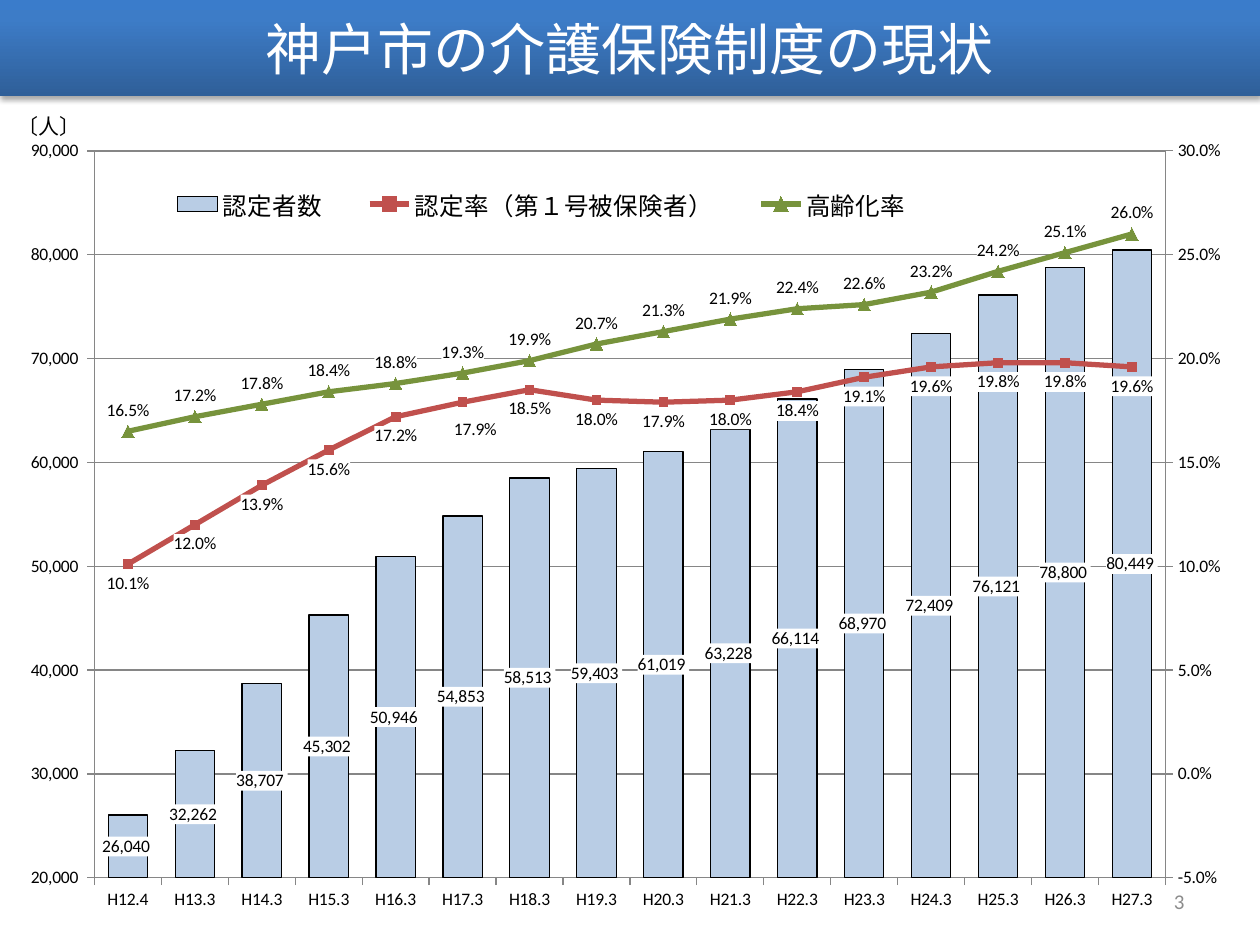
"""Build a slide charting certified users, certification rate and ageing rate."""
import copy
from dataclasses import dataclass
from typing import Any, NamedTuple

import pptx
import pptx.chart.axis
import pptx.chart.data
import pptx.dml.color
import pptx.enum.chart
import pptx.enum.shapes
import pptx.enum.text
import pptx.oxml
import pptx.oxml.ns
import pptx.util


@dataclass(frozen=True)
class Theme:
    latin: str = "Calibri"
    asian: str = "Noto Sans CJK JP"
    ink: str = "000000"
    paper: str = "FFFFFF"
    muted: str = "8C8C8C"
    grid: str = "868686"
    bar: str = "B9CDE5"
    certified: str = "C0504D"
    ageing: str = "77933C"
    banner: tuple = ((0, "2F5F99"), (0.8, "3D7CC7"), (1, "3A7CCB"))
    title_size: int = 32
    legend_size: int = 14
    note_size: int = 12
    chart_size: int = 10


class Box(NamedTuple):
    """Left, top, width and height as shares of the enclosing area."""
    x: float
    y: float
    w: float
    h: float


class Rate(NamedTuple):
    name: str
    percents: tuple
    color: str
    marker: Any
    marker_size: int
    label_side: Any


THEME = Theme()
WIDTH, HEIGHT = pptx.util.Inches(10), pptx.util.Inches(7.5)
BANNER_SHARE = 0.76 / 7.5
PLOT = Box(0.075, 0.065, 0.85, 0.856)
LEGEND = Box(0.11, 0.1, 0.64, 0.055)
YEARS = [f"H{year}.3" if year > 12 else "H12.4" for year in range(12, 28)]
CERTIFIED_COUNTS = (26040, 32262, 38707, 45302, 50946, 54853, 58513, 59403,
                    61019, 63228, 66114, 68970, 72409, 76121, 78800, 80449)
COUNT_FORMAT, RATE_FORMAT = "#,##0_ ", "0.0%"
SIDE = pptx.enum.chart.XL_LABEL_POSITION
MARKER = pptx.enum.chart.XL_MARKER_STYLE
RATES = (
    Rate("認定率（第１号被保険者）",
         (10.1, 12.0, 13.9, 15.6, 17.2, 17.9, 18.5, 18.0,
          17.9, 18.0, 18.4, 19.1, 19.6, 19.8, 19.8, 19.6),
         THEME.certified, MARKER.SQUARE, 5, SIDE.BELOW),
    Rate("高齢化率",
         (16.5, 17.2, 17.8, 18.4, 18.8, 19.3, 19.9, 20.7,
          21.3, 21.9, 22.4, 22.6, 23.2, 24.2, 25.1, 26.0),
         THEME.ageing, MARKER.TRIANGLE, 7, SIDE.ABOVE),
)


def rgb(code: str) -> pptx.dml.color.RGBColor:
    return pptx.dml.color.RGBColor.from_string(code)


def node(xml: str) -> Any:
    """Turn a fragment with c: and a: prefixes into an element."""
    head, mark, tail = xml.partition(">")
    slash = "/" if head.endswith("/") else ""
    return pptx.oxml.parse_xml(
        f"{head.rstrip('/')} {pptx.oxml.ns.nsdecls('c', 'a')}{slash}{mark}{tail}")


def place(box: Box) -> tuple:
    return tuple(round(share * side) for share, side in zip(box, (WIDTH, HEIGHT) * 2))


def write(shape: Any, text: str, size: int, color: str, font: str, align: Any) -> None:
    frame = shape.text_frame
    frame.text = text
    frame.vertical_anchor = pptx.enum.text.MSO_ANCHOR.MIDDLE
    paragraph = frame.paragraphs[0]
    paragraph.alignment = align
    face = paragraph.runs[0].font
    face.name, face.size, face.color.rgb = font, pptx.util.Pt(size), rgb(color)
    for props in shape.element.xpath(".//a:rPr"):
        props.append(node(f'<a:ea typeface="{THEME.asian}"/>'))


def add_banner(slide: Any, title: str) -> None:
    banner = slide.shapes.add_shape(
        pptx.enum.shapes.MSO_SHAPE.RECTANGLE, *place(Box(0, 0, 1, BANNER_SHARE)))
    banner.line.fill.background()
    banner.shadow.inherit = False
    banner.fill.gradient()
    banner.fill.gradient_angle = 90
    stops = banner.element.xpath(".//a:gsLst")[0]
    stops.append(copy.deepcopy(stops[-1]))
    for stop, (position, color) in zip(banner.fill.gradient_stops, THEME.banner):
        stop.position, stop.color.rgb = position, rgb(color)
    banner.element.xpath(".//a:effectLst")[0].append(node(
        '<a:outerShdw blurRad="40000" dist="23000" dir="5400000" rotWithShape="0">'
        f'<a:srgbClr val="{THEME.ink}"><a:alpha val="35000"/></a:srgbClr></a:outerShdw>'))
    write(banner, title, THEME.title_size, THEME.paper, THEME.latin,
          pptx.enum.text.PP_ALIGN.CENTER)


def add_note(slide: Any, box: Box, text: str, color: str, font: str, align: Any) -> None:
    note = slide.shapes.add_textbox(*place(box))
    note.text_frame.word_wrap = True
    write(note, text, THEME.note_size, color, font, align)


def manual_layout(box: Box, target: str = "") -> Any:
    modes = '<c:xMode val="edge"/><c:yMode val="edge"/>'
    shares = "".join(f'<c:{key} val="{share}"/>' for key, share in zip("xywh", box))
    return node(f"<c:layout><c:manualLayout>{target}{modes}{shares}"
                "</c:manualLayout></c:layout>")


def label(series: Any, side: Any, number_format: str) -> None:
    labels = series.data_labels
    labels.show_value, labels.position = True, side
    labels.number_format, labels.number_format_is_linked = number_format, False


def paint_label_backs(chart: Any) -> None:
    for number in chart.element.xpath(".//c:ser/c:dLbls/c:numFmt"):
        number.addnext(node(f'<c:spPr><a:solidFill><a:srgbClr val="{THEME.paper}"/>'
                            "</a:solidFill></c:spPr>"))


def nudge_label(labels: Any, index: int, dx: float, dy: float) -> None:
    """Shift one data label by shares of the chart, keeping the series style."""
    moved = node(f'<c:dLbl><c:idx val="{index}"/><c:layout><c:manualLayout>'
                 f'<c:x val="{dx}"/><c:y val="{dy}"/></c:manualLayout></c:layout></c:dLbl>')
    kept = ("numFmt", "spPr", "dLblPos", "showLegendKey", "showVal", "showCatName",
            "showSerName", "showPercent", "showBubbleSize")
    for tag in kept:
        moved.extend(copy.deepcopy(part) for part in labels.xpath(f"c:{tag}"))
    labels.insert(0, moved)


def scale(axis: Any, low: float, high: float, step: float, number_format: str) -> None:
    axis.minimum_scale, axis.maximum_scale, axis.major_unit = low, high, step
    axis.tick_labels.number_format = number_format
    axis.tick_labels.number_format_is_linked = False


def move_rates_to_right_axis(chart: Any) -> None:
    """Turn every series after the first into lines on a second value axis."""
    plot_area = chart.element.xpath(".//c:plotArea")[0]
    bars = plot_area.xpath("c:barChart")[0]
    lines = node('<c:lineChart><c:grouping val="standard"/><c:varyColors val="0"/>'
                 '<c:marker val="1"/><c:axId val="5001"/><c:axId val="5002"/></c:lineChart>')
    for series in bars.xpath("c:ser")[1:]:
        for flag in series.xpath("c:invertIfNegative"):
            series.remove(flag)
        lines.xpath("c:marker")[0].addprevious(series)
    bars.addnext(lines)
    categories, values = plot_area.xpath("c:catAx")[0], plot_area.xpath("c:valAx")[0]
    right_values, right_categories = copy.deepcopy(values), copy.deepcopy(categories)
    values.addnext(right_values)
    right_values.addnext(right_categories)
    for axis, own, other in ((right_categories, "5001", "5002"), (right_values, "5002", "5001")):
        axis.xpath("c:axId")[0].set("val", own)
        axis.xpath("c:crossAx")[0].set("val", other)
    right_values.xpath("c:axPos")[0].set("val", "r")
    right_values.xpath("c:crosses")[0].set("val", "max")
    rate_axis = pptx.chart.axis.ValueAxis(right_values)
    rate_axis.has_major_gridlines = False
    scale(rate_axis, -0.05, 0.3, 0.05, RATE_FORMAT)
    pptx.chart.axis.CategoryAxis(right_categories).visible = False


def style_rate(series: Any, rate: Rate) -> None:
    series.smooth = False
    series.format.line.color.rgb, series.format.line.width = rgb(rate.color), pptx.util.Pt(3)
    series.marker.style, series.marker.size = rate.marker, rate.marker_size
    series.marker.format.fill.solid()
    series.marker.format.fill.fore_color.rgb = rgb(rate.color)
    series.marker.format.line.color.rgb = rgb(rate.color)
    label(series, rate.label_side, RATE_FORMAT)


def add_trend_chart(slide: Any) -> None:
    figures = pptx.chart.data.CategoryChartData()
    figures.categories = YEARS
    figures.add_series("認定者数", CERTIFIED_COUNTS, COUNT_FORMAT)
    for rate in RATES:
        figures.add_series(rate.name, [round(p / 100, 3) for p in rate.percents], RATE_FORMAT)
    chart = slide.shapes.add_chart(
        pptx.enum.chart.XL_CHART_TYPE.COLUMN_CLUSTERED,
        *place(Box(0, BANNER_SHARE, 1, 1 - BANNER_SHARE)), figures).chart
    chart.has_title = False
    chart.font.name, chart.font.size = THEME.latin, pptx.util.Pt(THEME.chart_size)
    chart.font.color.rgb = rgb(THEME.ink)
    for axis in (chart.category_axis, chart.value_axis):
        axis.major_tick_mark = pptx.enum.chart.XL_TICK_MARK.OUTSIDE
        axis.format.line.color.rgb = rgb(THEME.grid)
    chart.value_axis.major_gridlines.format.line.color.rgb = rgb(THEME.grid)
    scale(chart.value_axis, 20000, 90000, 10000, COUNT_FORMAT)
    move_rates_to_right_axis(chart)

    bar_plot, rate_plot = chart.plots
    bar_plot.gap_width, bar_plot.vary_by_categories = 70, False
    counts = bar_plot.series[0]
    counts.format.fill.solid()
    counts.format.fill.fore_color.rgb = rgb(THEME.bar)
    counts.format.line.color.rgb, counts.format.line.width = rgb(THEME.ink), pptx.util.Pt(0.75)
    label(counts, SIDE.CENTER, COUNT_FORMAT)
    for series, rate in zip(rate_plot.series, RATES):
        style_rate(series, rate)
    paint_label_backs(chart)
    nudge_label(chart.element.xpath(".//c:lineChart/c:ser/c:dLbls")[0], 5, 0.01, 0.01)

    chart.has_legend = True
    chart.legend.position = pptx.enum.chart.XL_LEGEND_POSITION.TOP
    chart.legend.include_in_layout = False
    chart.legend.font.name, chart.legend.font.size = THEME.asian, pptx.util.Pt(THEME.legend_size)
    legend, plot_area = (chart.element.xpath(f".//c:{tag}")[0] for tag in ("legend", "plotArea"))
    for props in legend.xpath(".//a:defRPr"):
        props.append(node(f'<a:ea typeface="{THEME.asian}"/>'))
    for old in legend.xpath("c:layout") + plot_area.xpath("c:layout"):
        old.getparent().remove(old)
    legend.xpath("c:legendPos")[0].addnext(manual_layout(LEGEND))
    plot_area.insert(0, manual_layout(PLOT, '<c:layoutTarget val="inner"/>'))
    plot_area.append(node('<c:spPr><a:noFill/><a:ln w="9525"><a:solidFill>'
                          f'<a:srgbClr val="{THEME.grid}"/></a:solidFill></a:ln></c:spPr>'))


def main() -> None:
    deck = pptx.Presentation()
    deck.slide_width, deck.slide_height = WIDTH, HEIGHT
    slide = deck.slides.add_slide(deck.slide_layouts[6])
    align = pptx.enum.text.PP_ALIGN
    add_note(slide, Box(0.717, 0.927, 0.233, 0.053), "3", THEME.muted, THEME.latin, align.RIGHT)
    add_banner(slide, "神戸市の介護保険制度の現状")
    add_trend_chart(slide)
    add_note(slide, Box(0.004, 0.113, 0.07, 0.04), "〔人〕", THEME.ink, THEME.asian, align.LEFT)
    deck.save("out.pptx")


if __name__ == "__main__":
    main()
